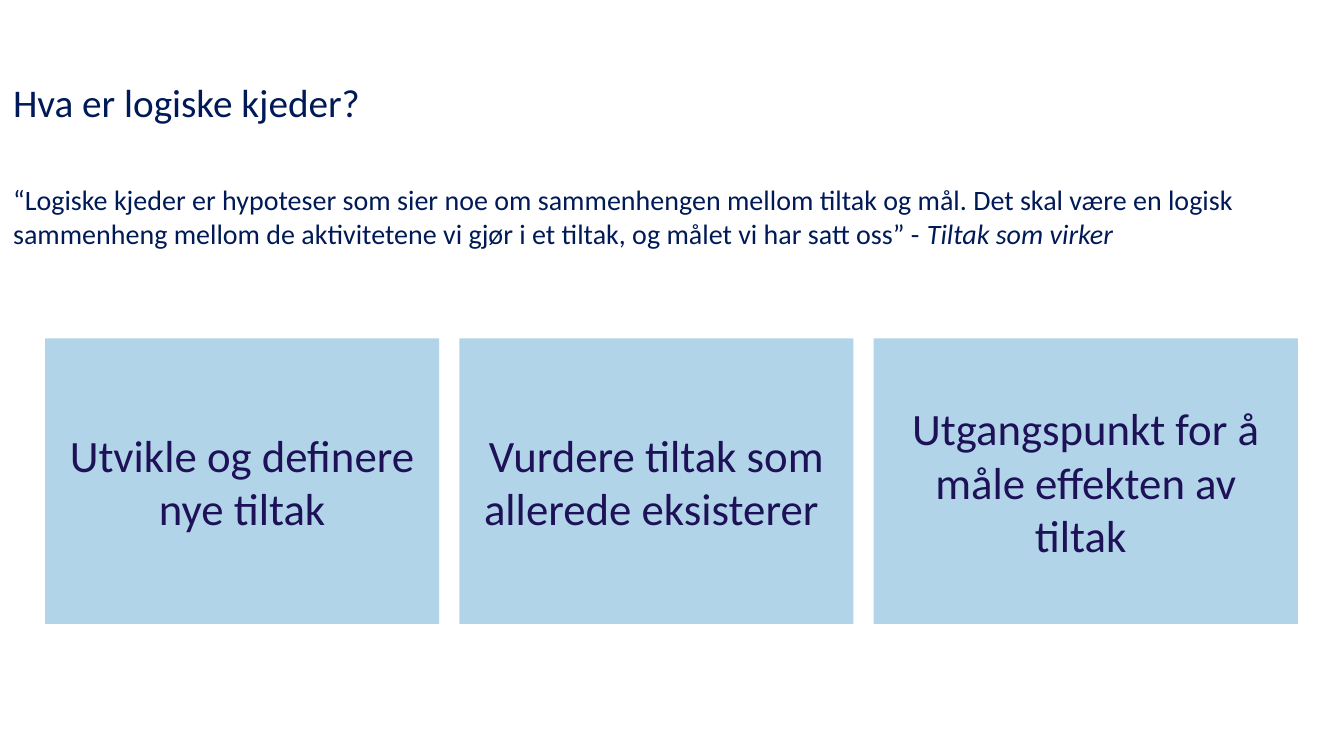
import pptx
import pptx.dml.color
import pptx.enum.shapes
import pptx.enum.text
import pptx.util

Cm = pptx.util.Cm
Pt = pptx.util.Pt
RGBColor = pptx.dml.color.RGBColor
ANCHOR = pptx.enum.text.MSO_ANCHOR
ALIGN = pptx.enum.text.PP_ALIGN

NAVY = RGBColor(0x00, 0x1A, 0x58)
INDIGO = RGBColor(0x1D, 0x11, 0x57)
LIGHT_BLUE = RGBColor(0xB2, 0xD4, 0xE8)


class SlideBuilder:
    font_name = "Calibri"
    inset = Cm(0.33)

    def __init__(self, slide):
        self.slide = slide

    def set_text(self, shape, runs, size, color, align, anchor):
        """Fill a shape with one paragraph of (text, italic) runs."""
        frame = shape.text_frame
        frame.word_wrap = True
        frame.auto_size = pptx.enum.text.MSO_AUTO_SIZE.NONE
        frame.vertical_anchor = anchor
        frame.margin_left = frame.margin_right = self.inset
        frame.margin_top = frame.margin_bottom = self.inset
        paragraph = frame.paragraphs[0]
        paragraph.alignment = align
        paragraph.font.name = self.font_name
        paragraph.font.size = Pt(size)
        paragraph.font.color.rgb = color
        for text, italic in runs:
            run = paragraph.add_run()
            run.text = text
            if italic:
                run.font.italic = True

    def title(self, text, left, top, width, height):
        heading = self.slide.shapes.title
        heading.left, heading.top = Cm(left), Cm(top)
        heading.width, heading.height = Cm(width), Cm(height)
        self.set_text(heading, [(text, False)], 28, NAVY, ALIGN.LEFT, ANCHOR.TOP)

    def body(self, runs, left, top, width, height):
        quotation = self.slide.shapes.add_textbox(
            Cm(left), Cm(top), Cm(width), Cm(height))
        self.set_text(quotation, runs, 20, NAVY, ALIGN.LEFT, ANCHOR.TOP)

    def card(self, text, left, top, width, height):
        card = self.slide.shapes.add_shape(
            pptx.enum.shapes.MSO_SHAPE.RECTANGLE,
            Cm(left), Cm(top), Cm(width), Cm(height))
        card.shadow.inherit = False
        card.fill.solid()
        card.fill.fore_color.rgb = LIGHT_BLUE
        card.line.fill.background()
        self.set_text(card, [(text, False)], 32, INDIGO, ALIGN.CENTER, ANCHOR.MIDDLE)


def main():
    presentation = pptx.Presentation()
    presentation.slide_width, presentation.slide_height = Cm(33.87), Cm(19.05)
    title_only = presentation.slide_layouts[5]
    builder = SlideBuilder(presentation.slides.add_slide(title_only))

    # Heading and quotation
    builder.title("Hva er logiske kjeder?", 0, 1.65, 31.55, 2.13)
    builder.body([
        ("“Logiske kjeder er hypoteser som sier noe om sammenhengen mellom tiltak "
         "og mål. Det skal være en logisk sammenheng mellom de aktivitetene vi gjør "
         "i et tiltak, og målet vi har satt oss” - ", False),
        ("Tiltak som virker", True),
    ], 0, 4.27, 31.55, 4.72)

    # Three uses of logic chains, left to right
    uses = [
        ("Utvikle og definere nye tiltak", 9.93),
        ("Vurdere tiltak som allerede eksisterer ", 9.93),
        ("Utgangspunkt for å måle effekten av tiltak ", 10.69),
    ]
    left, gap = 1.14, 0.51
    for use, width in uses:
        builder.card(use, left, 8.53, width, 7.19)
        left += width + gap

    presentation.save("out.pptx")


if __name__ == "__main__":
    main()
